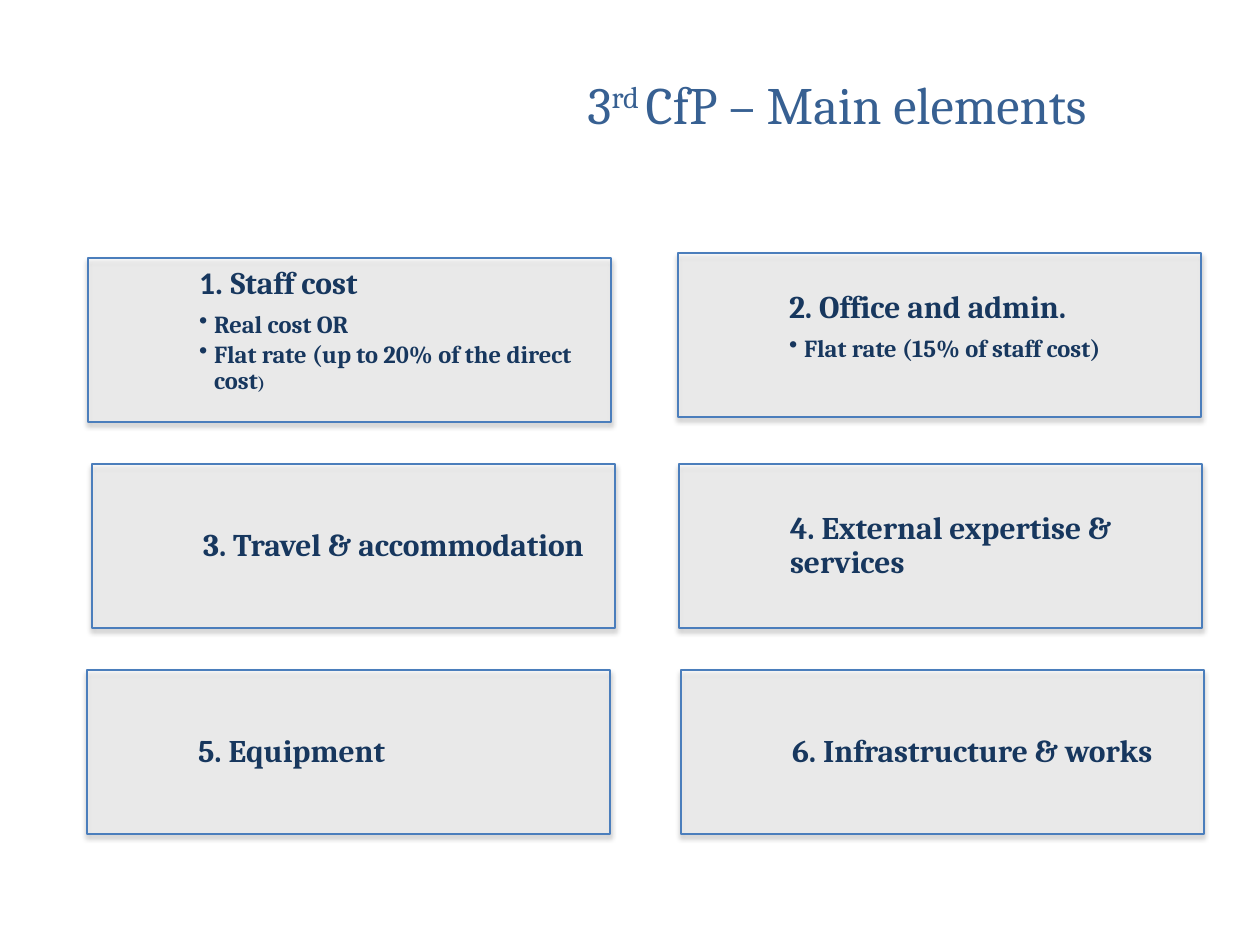
from lxml.etree import SubElement
from pptx import Presentation
from pptx.dml.color import RGBColor
from pptx.enum.shapes import MSO_SHAPE
from pptx.enum.text import MSO_ANCHOR, PP_ALIGN
from pptx.oxml.ns import qn
from pptx.util import Emu, Pt

PX = 914400 / 126
WHITE = RGBColor(0xFF, 0xFF, 0xFF)
NAVY = RGBColor(0x17, 0x37, 0x5E)
TITLE_BLUE = RGBColor(0x37, 0x60, 0x92)
BORDER_BLUE = RGBColor(0x4B, 0x7E, 0xBC)
CARD_WIDTH, CARD_HEIGHT = 523, 164

HEADING = {"name": "Cambria", "size": Pt(18), "bold": True}
NUMBER = HEADING | {"name": "Calibri"}
DETAIL = HEADING | {"size": Pt(14)}
SMALL = HEADING | {"size": Pt(10)}
TITLE = {"name": "Cambria", "size": Pt(30)}

CARDS = [
    (88, 258, MSO_ANCHOR.TOP, 9, [("1. ", NUMBER), ("Staff cost", HEADING)],
     [[("Real cost OR", DETAIL)],
      [("Flat rate (up to 20% of the direct cost", DETAIL), (")", SMALL)]]),
    (678, 253, MSO_ANCHOR.TOP, 38, [("2. Office and admin.", HEADING)],
     [[("Flat rate (15% of staff cost)", DETAIL)]]),
    (92, 464, MSO_ANCHOR.MIDDLE, 9, [("3. Travel & accommodation", HEADING)], []),
    (679, 464, MSO_ANCHOR.MIDDLE, 9,
     [("4. External expertise & services", HEADING)], []),
    (681, 670, MSO_ANCHOR.MIDDLE, 9, [("6. Infrastructure & works", HEADING)], []),
    (87, 670, MSO_ANCHOR.MIDDLE, 9, [("5. Equipment", HEADING)], []),
]


def px(length):
    """Turn a length in px into EMU."""
    return Emu(round(length * PX))


def apply_format(target, values):
    """Set each attribute named in values on target."""
    for key, value in values.items():
        setattr(target, key, value)


def add_run(paragraph, text, font_format, color):
    """Append a formatted run and return it."""
    run = paragraph.add_run()
    run.text = text
    apply_format(run.font, font_format)
    run.font.color.rgb = color
    return run


def add_bullet(paragraph):
    """Give the paragraph a hanging round bullet."""
    properties = paragraph._p.get_or_add_pPr()
    properties.set("marL", str(px(15)))
    properties.set("indent", str(-px(15)))
    SubElement(properties, qn("a:buChar"), char="•")


def add_panel(shapes, box):
    """Draw the translucent white panel with its soft shadow."""
    panel = shapes.add_shape(MSO_SHAPE.RECTANGLE, *map(px, box))
    panel.fill.solid()
    panel.fill.fore_color.rgb = WHITE
    properties = panel._element.spPr
    fill_color = properties.find(qn("a:solidFill"))[0]
    SubElement(fill_color, qn("a:alpha"), val="40000")
    panel.line.color.rgb = BORDER_BLUE
    panel.line.width = Pt(0.75)
    panel.shadow.inherit = False
    shadow = SubElement(properties.find(qn("a:effectLst")), qn("a:outerShdw"),
                        blurRad=str(Pt(3.1)), dist=str(Pt(1.8)),
                        dir="5400000", rotWithShape="0")
    shadow_color = SubElement(shadow, qn("a:srgbClr"), val="000000")
    SubElement(shadow_color, qn("a:alpha"), val="35000")


def add_card(slide, box, anchor, top_inset, heading, details):
    """Place one cost category: a panel with a heading and its bullets."""
    card = slide.shapes.add_group_shape()
    add_panel(card.shapes, box)
    frame = card.shapes.add_textbox(*map(px, box)).text_frame
    apply_format(frame, {
        "word_wrap": True, "vertical_anchor": anchor,
        "margin_left": px(111), "margin_top": px(top_inset),
        "margin_right": px(9), "margin_bottom": px(9),
    })
    for index, parts in enumerate([heading, *details]):
        paragraph = frame.add_paragraph() if index else frame.paragraphs[0]
        if index:
            add_bullet(paragraph)
        apply_format(paragraph, {
            "level": 1 if index else 0, "line_spacing": 0.9,
            "space_after": Pt(2.1 if index else 6.3),
        })
        for text, font_format in parts:
            add_run(paragraph, text, font_format, NAVY)


def add_title(slide, box):
    """Place the centred title with its raised ordinal."""
    frame = slide.shapes.add_textbox(*map(px, box)).text_frame
    frame.word_wrap = True
    paragraph = frame.paragraphs[0]
    paragraph.alignment = PP_ALIGN.CENTER
    for text, baseline in [("3", 0), ("rd ", 30000), ("CfP – Main elements", 0)]:
        run = add_run(paragraph, text, TITLE, TITLE_BLUE)
        run._r.get_or_add_rPr().set("baseline", str(baseline))


def main():
    """Build and save the slide."""
    presentation = Presentation()
    presentation.slide_width, presentation.slide_height = px(1260), px(945)
    slide = presentation.slides.add_slide(presentation.slide_layouts[6])
    for left, top, *content in CARDS:
        add_card(slide, (left, top, CARD_WIDTH, CARD_HEIGHT), *content)
    add_title(slide, (475, 66, 724, 100))
    presentation.save("out.pptx")


if __name__ == "__main__":
    main()
